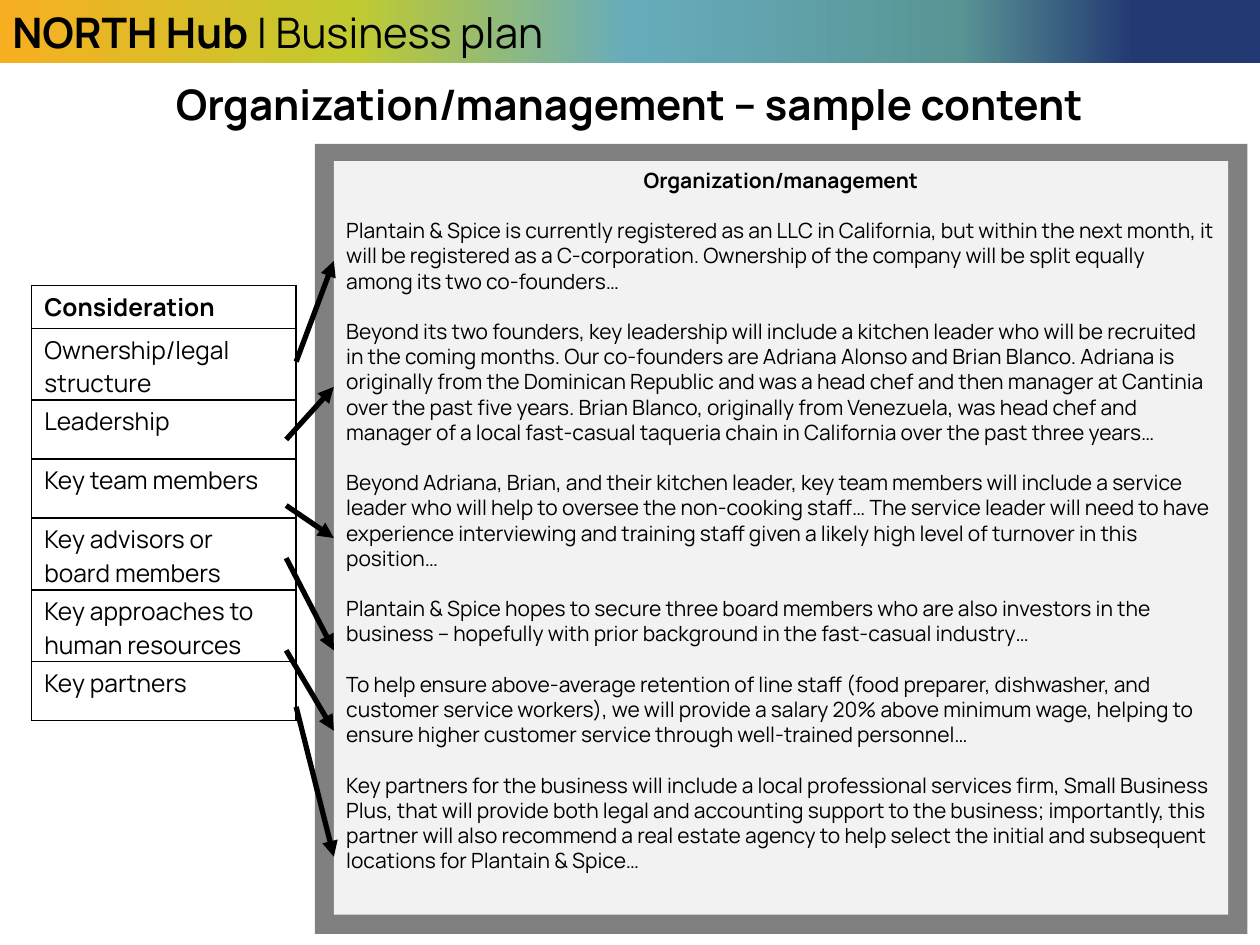
from pptx import Presentation
from pptx.dml.color import RGBColor
from pptx.enum.shapes import MSO_CONNECTOR as CONN, MSO_SHAPE as SHAPE
from pptx.enum.text import MSO_ANCHOR as ANCHOR, PP_ALIGN as ALIGN
from pptx.oxml import parse_xml
from pptx.oxml.ns import nsdecls, qn
from pptx.util import Cm, Pt
from lxml.etree import SubElement

BLACK = RGBColor(0x00, 0x00, 0x00)
WHITE = RGBColor(0xFF, 0xFF, 0xFF)
GRAY = RGBColor(0x80, 0x80, 0x80)
PALE = RGBColor(0xF2, 0xF2, 0xF2)
BANNER_STOPS = [
    (0, RGBColor(0xF7, 0xAF, 0x21)),
    (28, RGBColor(0xC1, 0xCA, 0x2F)),
    (50, RGBColor(0x67, 0xAC, 0xBC)),
    (76, RGBColor(0x59, 0x95, 0x95)),
    (90, RGBColor(0x23, 0x39, 0x73)),
]

CONSIDERATIONS = [  # text, row height in cm
    ("Consideration", 0.86),
    ("Ownership/legal structure", 1.44),
    ("Leadership", 1.19),
    ("Key team members", 1.19),
    ("Key advisors or board members", 1.44),
    ("Key approaches to human resources", 1.44),
    ("Key partners", 1.19),
]

SAMPLE = [
    "Plantain & Spice is currently registered as an LLC in California, but within the next month, "
    "it will be registered as a C-corporation. Ownership of the company will be split equally "
    "among its two co-founders…",
    "Beyond its two founders, key leadership will include a kitchen leader who will be recruited "
    "in the coming months. Our co-founders are Adriana Alonso and Brian Blanco. Adriana is "
    "originally from the Dominican Republic and was a head chef and then manager at Cantinia "
    "over the past five years. Brian Blanco, originally from Venezuela, was head chef and "
    "manager of a local fast-casual taqueria chain in California over the past three years…",
    "Beyond Adriana, Brian, and their kitchen leader, key team members will include a service "
    "leader who will help to oversee the non-cooking staff… The service leader will need to have "
    "experience interviewing and training staff given a likely high level of turnover in this "
    "position…",
    "Plantain & Spice hopes to secure three board members who are also investors in the "
    "business – hopefully with prior background in the fast-casual industry…",
    "To help ensure above-average retention of line staff (food preparer, dishwasher, and "
    "customer service workers), we will provide a salary 20% above minimum wage, helping to "
    "ensure higher customer service through well-trained personnel…",
    "Key partners for the business will include a local professional services firm, Small Business "
    "Plus, that will provide both legal and accounting support to the business; importantly, this "
    "partner will also recommend a real estate agency to help select the initial and subsequent "
    "locations for Plantain & Spice…",
]

TABLE_EDGE, ARROW_INSET, PANEL_LEFT = 5.97, 5.77, 6.73
ARROWS = [  # start x, start y, end y in cm
    (TABLE_EDGE, 7.29, 5.26),
    (ARROW_INSET, 8.86, 7.8),
    (ARROW_INSET, 10.19, 10.85),
    (ARROW_INSET, 11.25, 13.11),
    (ARROW_INSET, 13.11, 14.73),
    (TABLE_EDGE, 14.25, 17.27),
]
MIDDLE_ARROW = 2  # meets the middle of the panel's left side


class SlideBuilder:
    font = "Manrope"

    def __init__(self, slide):
        self.slide = slide

    def style(self, font, size, bold=False):
        font.name, font.size, font.bold = self.font, Pt(size), bold
        font.color.rgb = BLACK

    def title(self, text, left, top, width, height):
        sp = self.slide.shapes.title
        sp.left, sp.top, sp.width, sp.height = Cm(left), Cm(top), Cm(width), Cm(height)
        tf = sp.text_frame
        tf.text, tf.vertical_anchor = text, ANCHOR.MIDDLE
        p = tf.paragraphs[0]
        p.alignment, p.line_spacing = ALIGN.CENTER, 1.0
        self.style(p.font, 24, True)

    def box(self, left, top, width, height, color=None):
        sp = self.slide.shapes.add_shape(SHAPE.RECTANGLE, Cm(left), Cm(top), Cm(width), Cm(height))
        sp.shadow.inherit = False
        sp.line.fill.background()
        if color is not None:
            sp.fill.solid()
            sp.fill.fore_color.rgb = color
        return sp

    def banner(self, bold_text, plain_text, width, height):
        sp = self.box(0, 0, width, height)
        sp.fill.gradient()
        sp.fill.gradient_angle = 0
        stops = sp.element.spPr.find(qn("a:gradFill")).find(qn("a:gsLst"))
        for stop in list(stops):
            stops.remove(stop)
        for percent, color in BANNER_STOPS:
            gs = SubElement(stops, qn("a:gs"), pos=str(percent * 1000))
            SubElement(gs, qn("a:srgbClr"), val=str(color))
        p = sp.text_frame.paragraphs[0]
        p.alignment = ALIGN.LEFT
        for text, bold in ((bold_text, True), (plain_text, False)):
            r = p.add_run()
            r.text = text
            self.style(r.font, 24, bold)

    def panel(self, heading, paragraphs, left, top, width, height):
        sp = self.box(left, top, width, height, PALE)
        tf = sp.text_frame
        tf.word_wrap, tf.vertical_anchor = True, ANCHOR.TOP
        for i, text in enumerate([heading, *paragraphs]):
            p = tf.add_paragraph() if i else tf.paragraphs[0]
            p.text = text
            p.alignment = ALIGN.LEFT if i else ALIGN.CENTER
            p.line_spacing = Pt(14.4)
            p.space_before = Pt(14.4 if i else 0)
            self.style(p.font, 12, bold=i == 0)
        return sp

    def table(self, rows, left, top, width):
        height = sum(h for _, h in rows)
        table = self.slide.shapes.add_table(
            len(rows), 1, Cm(left), Cm(top), Cm(width), Cm(height)).table
        table.first_row = table.horz_banding = False
        for i, (text, row_height) in enumerate(rows):
            table.rows[i].height = Cm(row_height)
            cell = table.cell(i, 0)
            cell.text = text
            cell.margin_top, cell.margin_bottom = Cm(0.09), 0
            self.style(cell.text_frame.paragraphs[0].font, 14, bold=i == 0)
            tc_pr = cell._tc.get_or_add_tcPr()
            for side in "LRTB":
                tc_pr.append(parse_xml(
                    f'<a:ln{side} {nsdecls("a")} w="12700"><a:solidFill>'
                    f'<a:srgbClr val="{BLACK}"/></a:solidFill></a:ln{side}>'))
            cell.fill.solid()
            cell.fill.fore_color.rgb = WHITE

    def arrow(self, x1, y1, x2, y2):
        line = self.slide.shapes.add_connector(CONN.STRAIGHT, Cm(x1), Cm(y1), Cm(x2), Cm(y2))
        line.line.color.rgb = BLACK
        line.line.width = Pt(3)
        SubElement(line.line._get_or_add_ln(), qn("a:tailEnd"), type="triangle")
        SubElement(line._element.spPr, qn("a:effectLst"))
        return line


def main():
    prs = Presentation()
    prs.slide_width, prs.slide_height = Cm(25.4), Cm(19.05)
    title_only = prs.slide_layouts[5]
    page = SlideBuilder(prs.slides.add_slide(title_only))

    # Title and banner
    page.title("Organization/management – sample content", 0.76, 1.45, 23.85, 1.27)
    page.banner("NORTH Hub ", "| Business plan", 25.4, 1.27)

    # Framed sample text
    page.box(6.35, 2.9, 18.8, 15.93, GRAY)
    panel = page.panel("Organization/management", SAMPLE, PANEL_LEFT, 3.25, 18.03, 15.19)

    # Considerations, each pointing to its paragraph
    page.table(CONSIDERATIONS, 0.64, 5.76, 5.33)
    for i, (x, y, end_y) in enumerate(ARROWS):
        line = page.arrow(x, y, PANEL_LEFT, end_y)
        if i == MIDDLE_ARROW:
            line.end_connect(panel, 1)

    prs.save("out.pptx")


if __name__ == "__main__":
    main()
